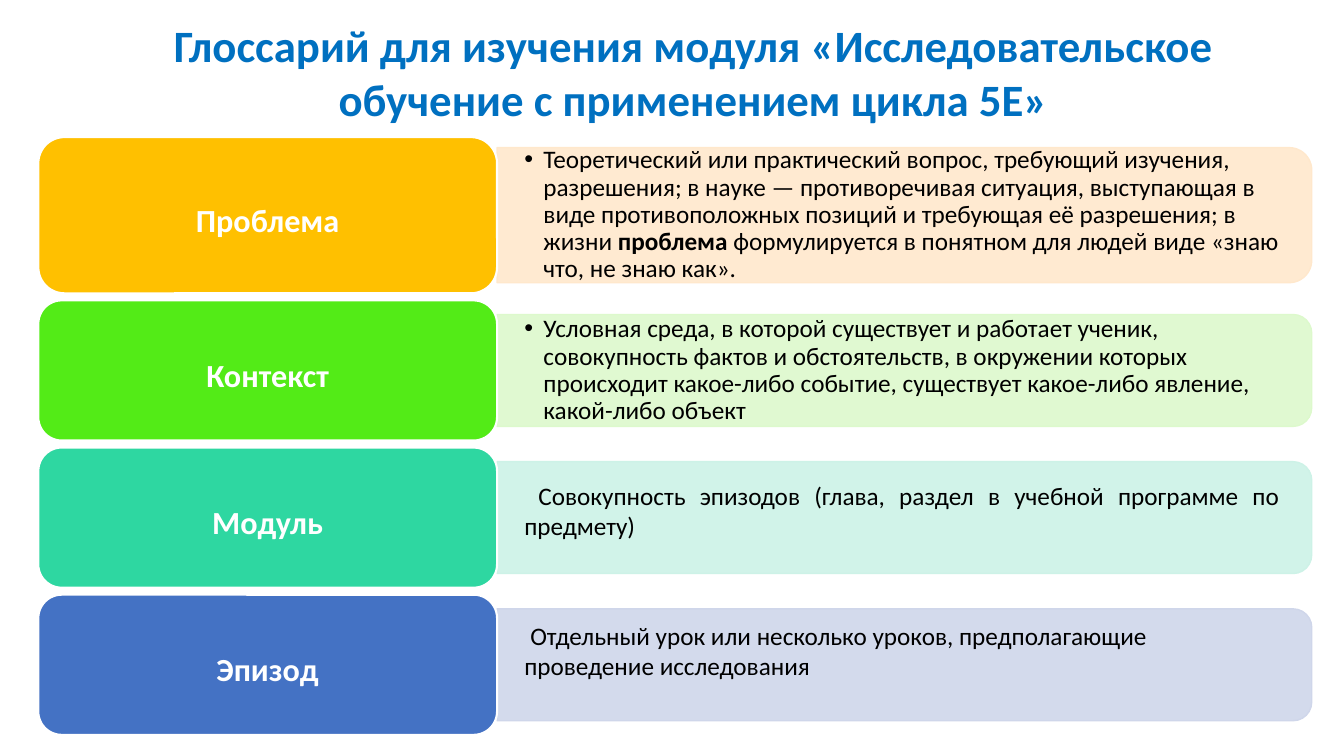
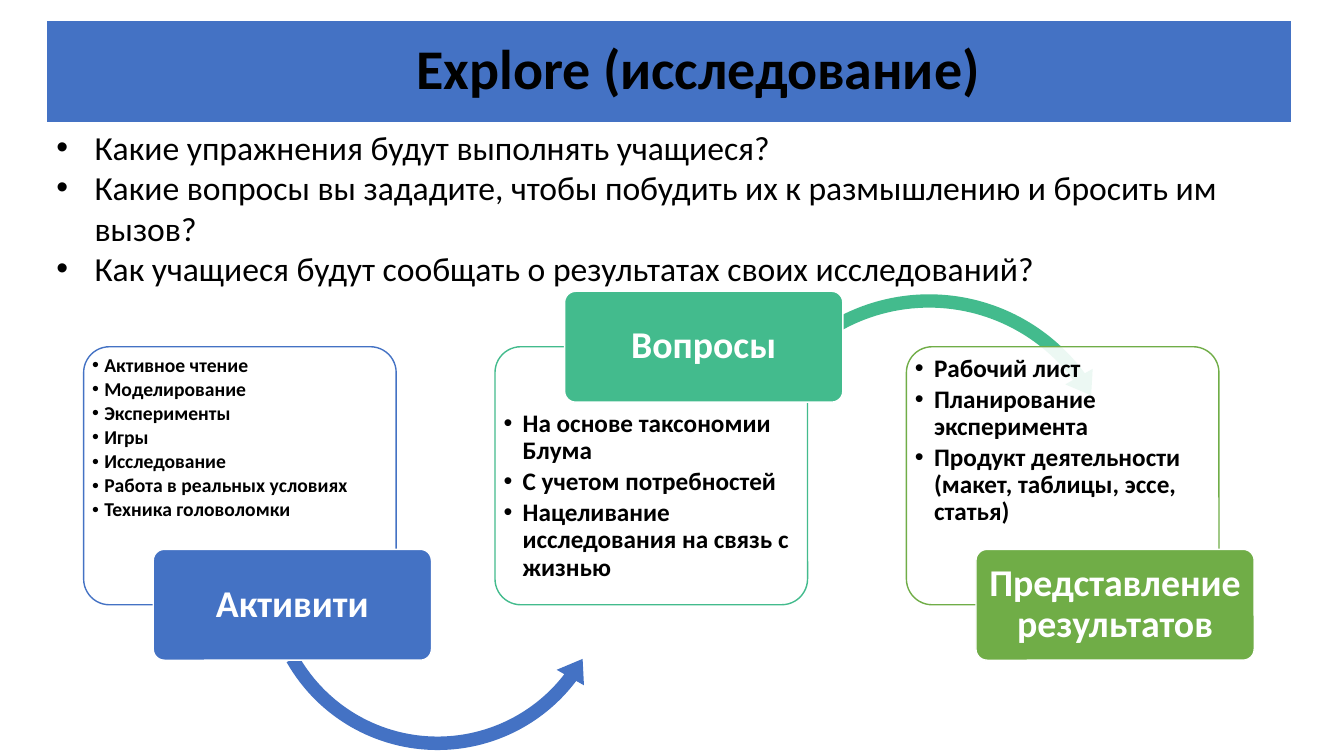
from dataclasses import dataclass

from lxml.etree import SubElement
from pptx import Presentation
from pptx.dml.color import RGBColor
from pptx.enum.shapes import MSO_SHAPE as Shape
from pptx.enum.text import MSO_ANCHOR as Anchor, PP_ALIGN as Align
from pptx.oxml.ns import qn
from pptx.util import Inches, Pt


@dataclass(frozen=True)
class Theme:
    font: str = "Calibri"
    black: str = "000000"
    white: str = "FFFFFF"
    title: str = "0070C0"
    blue: str = "4472C4"
    amber: str = "FFC000"
    lime: str = "53EB17"
    mint: str = "2ED7A1"
    teal: str = "43BB8D"
    green: str = "70AD47"
    pale_amber: str = "FFE8CC"
    pale_lime: str = "DDF9CC"
    pale_mint: str = "CDF2E7"
    pale_blue: str = "CFD6EA"
    title_size: int = 32
    banner_size: int = 40
    button_size: int = 27
    question_size: int = 24
    term_size: int = 23
    body_size: int = 18
    list_size: int = 14


THEME = Theme()

GLOSSARY = [
    dict(term="Проблема", tile=THEME.amber, band=THEME.pale_amber, height=1.55, band_height=1.34,
         runs=[("Теоретический или практический вопрос, требующий изучения, разрешения; "
                "в науке — противоречивая ситуация, выступающая в виде противоположных "
                "позиций и требующая её разрешения; в жизни ", False),
               ("проблема", True),
               (" формулируется в понятном для людей виде «знаю что, не знаю как».", False)],
         style=dict(bullet=0.19, spacing=0.9)),
    dict(term="Контекст", tile=THEME.lime, band=THEME.pale_lime, height=1.39, band_height=1.11,
         runs=[("Условная среда, в которой существует и работает ученик, совокупность фактов "
                "и обстоятельств, в окружении которых происходит какое-либо событие, "
                "существует какое-либо явление, какой-либо объект", False)],
         style=dict(bullet=0.19, spacing=0.9)),
    dict(term="Модуль", tile=THEME.mint, band=THEME.pale_mint, height=1.39, band_height=1.11,
         runs=[("Совокупность эпизодов (глава, раздел в учебной программе по предмету)", False)],
         style=dict(first_line=0.14, align=Align.JUSTIFY), lift=0.07),
    dict(term="Эпизод", tile=THEME.blue, band=THEME.pale_blue, height=1.39, band_height=1.11,
         runs=[("Отдельный урок или несколько уроков, предполагающие проведение исследования", False)],
         style=dict(first_line=0.06), lift=0.14),
]

QUESTIONS = [
    "Какие упражнения будут выполнять учащиеся?",
    "Какие вопросы вы зададите, чтобы побудить их к размышлению и бросить им вызов?",
    "Как учащиеся будут сообщать о результатах своих исследований?",
]

STAGES = [
    dict(name="Активити", color=THEME.blue, size=THEME.list_size, bullet=0.12,
         items=["Активное чтение", "Моделирование", "Эксперименты", "Игры", "Исследование",
                "Работа в реальных условиях", "Техника головоломки"],
         arrow=(Shape.LEFT_CIRCULAR_ARROW, 2.53, 3.91, 3.62,
                (0.037, 4.611, 22.366, 90.245, 0.043))),
    dict(name="Вопросы", color=THEME.teal, size=THEME.body_size, bullet=0.19, button_on_top=True,
         items=["На основе таксономии Блума", "С учетом потребностей",
                "Нацеливание исследования на связь с жизнью"],
         arrow=(Shape.CIRCULAR_ARROW, 7.21, 2.83, 4.01,
                (0.033, 4.12, 194.125, 125.755, 0.039))),
    dict(name="Представление результатов", color=THEME.green, size=THEME.body_size, bullet=0.19,
         items=["Рабочий лист", "Планирование эксперимента",
                "Продукт деятельности (макет, таблицы, эссе, статья)"]),
]


def apply_format(target, **values):
    for name, value in values.items():
        setattr(target, name, value)


def set_frame(frame, insets=(0.1, 0.05, 0.1, 0.05), anchor=Anchor.TOP):
    left, top, right, bottom = map(Inches, insets)
    apply_format(frame, word_wrap=True, vertical_anchor=anchor, margin_left=left,
                 margin_top=top, margin_right=right, margin_bottom=bottom)


def write_paragraphs(frame, paragraphs, size, color=THEME.black, bold=False, align=Align.LEFT,
                     spacing=1.0, after=0, bullet=0, first_line=0):
    for index, runs in enumerate(paragraphs):
        paragraph = frame.paragraphs[0] if index == 0 else frame.add_paragraph()
        apply_format(paragraph, alignment=align, line_spacing=spacing, space_after=Pt(after))
        properties = paragraph._p.get_or_add_pPr()
        properties.set("marL", str(Inches(bullet)))
        properties.set("indent", str(Inches(first_line - bullet)))
        if bullet:
            SubElement(properties, qn("a:buFont")).set("typeface", "Arial")
            SubElement(properties, qn("a:buChar")).set("char", "•")
        for text, strong in runs:
            run = paragraph.add_run()
            run.text = text
            apply_format(run.font, name=THEME.font, size=Pt(size), bold=bold or strong)
            run.font.color.rgb = RGBColor.from_string(color)


def plain(*texts):
    return [[(text, False)] for text in texts]


def add_text(slide, box, paragraphs, size, insets=(0.1, 0.05, 0.1, 0.05), anchor=Anchor.TOP, **style):
    frame = slide.shapes.add_textbox(*map(Inches, box)).text_frame
    set_frame(frame, insets, anchor)
    write_paragraphs(frame, paragraphs, size, **style)


def add_block(slide, kind, box, fill, line=None, line_width=1, adjustments=()):
    block = slide.shapes.add_shape(kind, *map(Inches, box))
    block.shadow.inherit = False
    block.fill.solid()
    block.fill.fore_color.rgb = RGBColor.from_string(fill)
    if line:
        block.line.color.rgb = RGBColor.from_string(line)
        block.line.width = Pt(line_width)
    else:
        block.line.fill.background()
    for index, value in enumerate(adjustments):
        block.adjustments[index] = value
    return block


def make_translucent(block):
    color = block._element.spPr.find(qn("a:solidFill")).find(qn("a:srgbClr"))
    SubElement(color, qn("a:alpha")).set("val", "90000")


def add_definition(slide, entry, top):
    height, band_height = entry["height"], entry["band_height"]
    tile_left, tile_width, band_width = 0.38, 4.55, 8.08
    band_left = tile_left + tile_width
    middle = top + height / 2
    band = add_block(slide, Shape.ROUND_2_SAME_RECTANGLE,
                     (band_left + (band_width - band_height) / 2, middle - band_width / 2,
                      band_height, band_width), entry["band"], entry["band"])
    band.rotation = 90
    make_translucent(band)
    text_height = band_height * 0.9
    add_text(slide, (band_left, middle - text_height / 2 - entry.get("lift", 0), 8.03, text_height),
             [entry["runs"]], THEME.body_size, (0.27, 0.14, 0.27, 0.14), Anchor.MIDDLE,
             **entry["style"])
    tile = add_block(slide, Shape.ROUNDED_RECTANGLE, (tile_left, top, tile_width, height),
                     entry["tile"], THEME.white, 1.5)
    set_frame(tile.text_frame, (0.1, 0.13, 0.1, 0.05), Anchor.MIDDLE)
    write_paragraphs(tile.text_frame, plain(entry["term"]), THEME.term_size, THEME.white,
                     bold=True, align=Align.CENTER)


def add_stage(slide, stage, left):
    button_on_top = stage.get("button_on_top", False)
    color, size = stage["color"], stage["size"]
    card = add_block(slide, Shape.ROUNDED_RECTANGLE, (left, 3.44, 3.1, 2.56), THEME.white,
                     color, adjustments=[0.1])
    make_translucent(card)
    set_frame(card.text_frame, (0.01, 0.56 if button_on_top else 0.01, 0.01, 0.01))
    write_paragraphs(card.text_frame, plain(*stage["items"]), size, bold=True, spacing=0.9,
                     after=size * 0.15, bullet=stage["bullet"])
    if "arrow" in stage:
        kind, arrow_left, arrow_top, side, adjustments = stage["arrow"]
        add_block(slide, kind, (arrow_left, arrow_top, side, side), color, adjustments=adjustments)
    button = add_block(slide, Shape.ROUNDED_RECTANGLE,
                       (left + 0.69, 2.89 if button_on_top else 5.45, 2.76, 1.1),
                       color, THEME.white, adjustments=[0.1])
    set_frame(button.text_frame, (0.06, 0.04, 0.06, 0.04), Anchor.MIDDLE)
    write_paragraphs(button.text_frame, plain(stage["name"]), THEME.button_size, THEME.white,
                     bold=True, align=Align.CENTER, spacing=0.9)


def build_glossary(slide):
    top = 1.36
    for entry in GLOSSARY:
        add_definition(slide, entry, top)
        top += entry["height"] + 0.07
    add_text(slide, (1.21, 0.13, 11.34, 1.48),
             plain("Глоссарий для изучения модуля «Исследовательское обучение с применением цикла 5Е»"),
             THEME.title_size, color=THEME.title, bold=True, align=Align.CENTER)


def build_explore(slide):
    banner = add_block(slide, Shape.RECTANGLE, (0.46, 0.2, 12.35, 1.02), THEME.blue, THEME.white)
    set_frame(banner.text_frame, (0.64, 0.06, 0.06, 0.06), Anchor.MIDDLE)
    write_paragraphs(banner.text_frame, plain("Explore (исследование)"), THEME.banner_size,
                     bold=True, align=Align.CENTER, spacing=0.9)
    add_text(slide, (0.46, 1.21, 12.35, 1.72), plain(*QUESTIONS), THEME.question_size, bullet=0.38)
    for index, stage in enumerate(STAGES):
        add_stage(slide, stage, 0.83 + index * 4.08)


def main():
    deck = Presentation()
    apply_format(deck, slide_width=Inches(13.33), slide_height=Inches(7.5))
    for build in (build_glossary, build_explore):
        build(deck.slides.add_slide(deck.slide_layouts[6]))
    deck.save("out.pptx")


if __name__ == "__main__":
    main()
